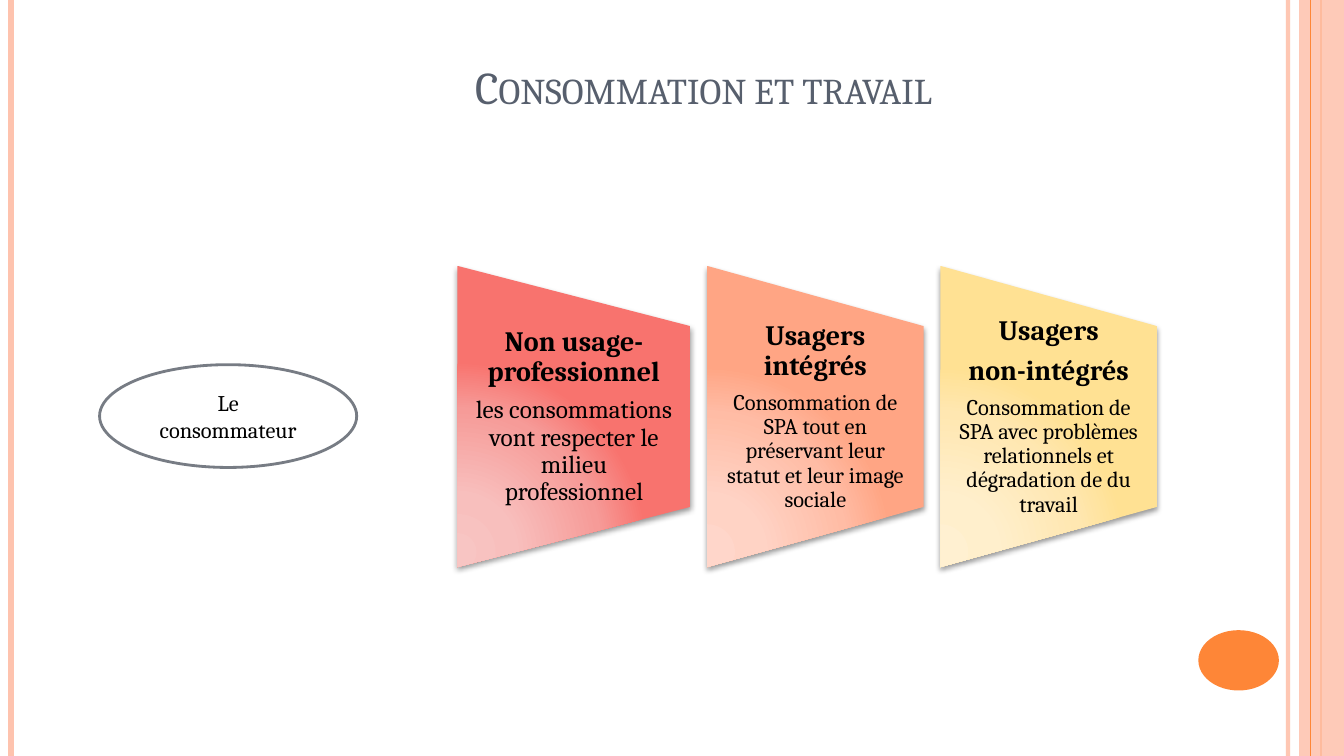
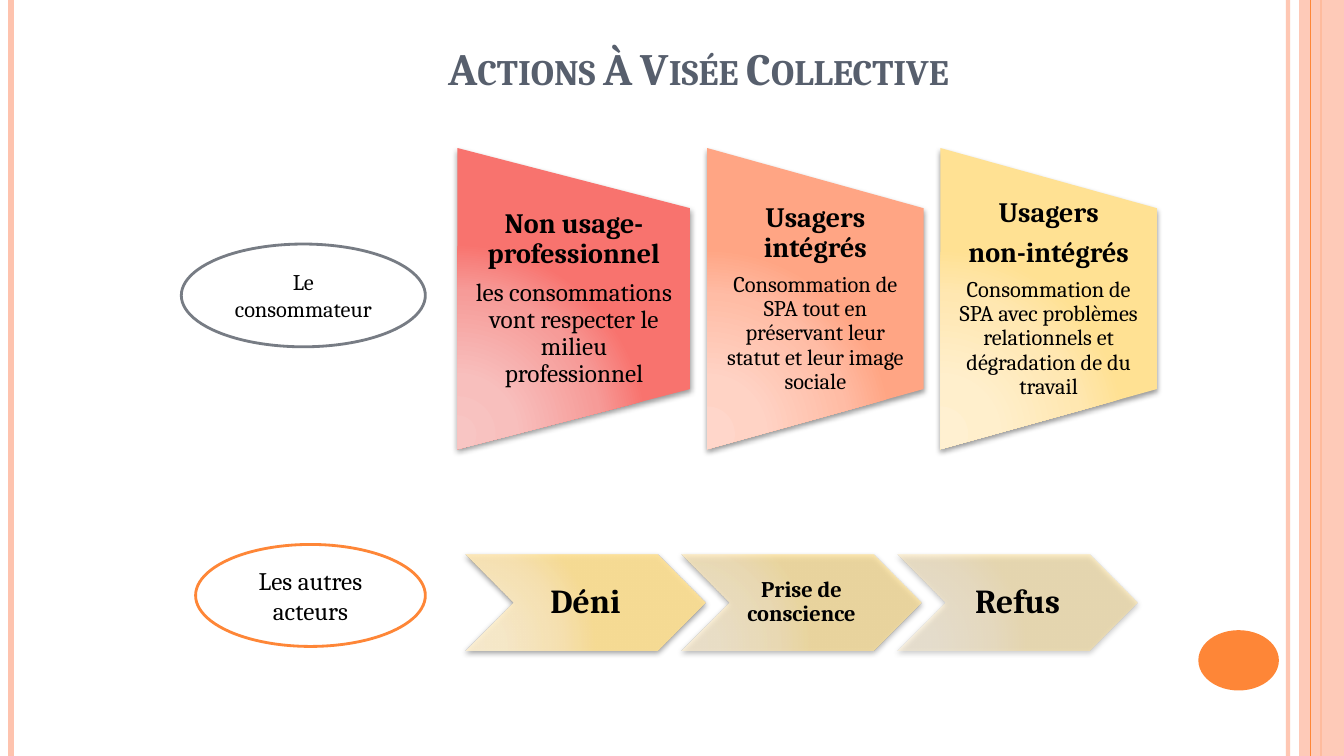
from lxml.etree import SubElement
from pptx import Presentation
from pptx.dml.color import RGBColor
from pptx.enum.shapes import MSO_CONNECTOR as LINE, MSO_SHAPE as SHAPE
from pptx.enum.text import MSO_ANCHOR as ANCHOR, PP_ALIGN as ALIGN
from pptx.oxml import parse_xml
from pptx.oxml.ns import nsdecls, qn
from pptx.util import Cm, Pt

WIDTH, HEIGHT = 33.87, 19.05
FONT = "Cambria"
BLACK, WHITE, SLATE, GREY = "000000", "FFFFFF", "575F6D", "777C84"
ORANGE, PEACH = "FE8637", "FEC3AE"

# Gradient colours at the stops, from light to full
STOPS = (0, 30, 75, 100)
RED = ("F8C5C3", "F8BFBD", "F69B98", "F8736E")
SALMON = ("FFD6CA", "FFD3C5", "FFBCA5", "FFA584")
YELLOW = ("FFF0D1", "FFEFCC", "FFE7B1", "FFE193")

# Panels: colours, width, paragraphs (text, size, bold)
PANELS = [
    (RED, 5.87, [("Non usage-professionnel", 20, True),
                 ("les consommations vont respecter le milieu professionnel", 18, False)]),
    (SALMON, 5.46, [("Usagers intégrés", 20, True),
                    ("Consommation de SPA tout en préservant leur statut et leur "
                     "image sociale", 16, False)]),
    (YELLOW, 5.46, [("Usagers", 20, True), ("non-intégrés", 20, True),
                    ("Consommation de SPA avec problèmes relationnels et "
                     "dégradation de du travail", 16, False)]),
]
# Chevrons: text, size, opacity, inset
STEPS = [("Déni", 24, 90, 0.1), ("Prise de conscience", 16, 70, 0.05), ("Refus", 24, 50, 0.1)]


def rgb(value):
    return RGBColor.from_string(value)


def set_alpha(sp, percent):
    for color in sp.element.spPr.iter(qn("a:srgbClr")):
        SubElement(color, qn("a:alpha")).set("val", str(percent * 1000))


def write(tf, text, size, bold=False, color=BLACK, spacing=1.0, after=0.0):
    """Add a centred paragraph; `after` is a share of the text size."""
    p = tf.add_paragraph() if tf.text else tf.paragraphs[0]
    p.alignment = ALIGN.CENTER
    p.line_spacing = spacing
    p.space_before, p.space_after = Pt(0), Pt(size * after)
    r = p.add_run()
    r.text = text
    r.font.name, r.font.size, r.font.bold = FONT, Pt(size), bold
    r.font.color.rgb = rgb(color)
    return r


def add_shape(slide, kind, left, top, width, height, fill=None, line=None):
    sp = slide.shapes.add_shape(kind, Cm(left), Cm(top), Cm(width), Cm(height))
    sp.shadow.inherit = False
    if fill:
        sp.fill.solid()
        sp.fill.fore_color.rgb = rgb(fill)
    else:
        sp.fill.background()
    if line:
        sp.line.color.rgb = rgb(line)
        sp.line.width = Pt(2)
    else:
        sp.line.fill.background()
    return sp


def add_glow_shape(slide, kind, box, colors, alpha=100):
    """Shape lit from its lower left corner, with a soft shadow below."""
    sp = add_shape(slide, kind, *box)
    spPr = sp.element.spPr
    stops = "".join(
        f'<a:gs pos="{pos * 1000}"><a:srgbClr val="{color}">'
        f'<a:alpha val="{alpha * 1000}"/></a:srgbClr></a:gs>'
        for pos, color in zip(STOPS, colors))
    spPr.replace(spPr.find(qn("a:noFill")), parse_xml(
        f'<a:gradFill {nsdecls("a")} rotWithShape="0"><a:gsLst>{stops}</a:gsLst>'
        '<a:path path="circle"><a:fillToRect l="5000" t="100000" r="120000" b="10000"/>'
        '</a:path></a:gradFill>'))
    spPr.find(qn("a:effectLst")).append(parse_xml(
        f'<a:outerShdw {nsdecls("a")} blurRad="50800" dist="25400" dir="5400000" '
        f'rotWithShape="0"><a:srgbClr val="{BLACK}"><a:alpha val="40000"/>'
        '</a:srgbClr></a:outerShdw>'))
    return sp


def add_label(slide, left, top, width, height, inset_x, inset_y):
    tf = slide.shapes.add_textbox(Cm(left), Cm(top), Cm(width), Cm(height)).text_frame
    tf.word_wrap = True
    tf.vertical_anchor = ANCHOR.MIDDLE
    tf.margin_left = tf.margin_right = Cm(inset_x)
    tf.margin_top = tf.margin_bottom = Cm(inset_y)
    return tf


def add_rule(slide, x, color, width):
    cx = slide.shapes.add_connector(LINE.STRAIGHT, Cm(x), Cm(0), Cm(x), Cm(HEIGHT))
    cx.line.color.rgb = rgb(color)
    cx.line.width = Pt(width)
    SubElement(cx.element.spPr, qn("a:effectLst"))
    return cx


def add_frame(prs, slide):
    """Draw the side bands and the disc, then move them to the master."""
    pale_rule = add_rule(slide, 32.46, PEACH, 3)
    set_alpha(pale_rule, 93)
    parts = [pale_rule, add_rule(slide, 0.28, PEACH, 4.5), add_rule(slide, 33.3, ORANGE, 1.5)]
    band = add_shape(slide, SHAPE.RECTANGLE, 32.74, 0, WIDTH - 32.74, HEIGHT, PEACH)
    set_alpha(band, 87)
    parts += [band, add_rule(slide, 33.02, ORANGE, 0.75),
              add_shape(slide, SHAPE.OVAL, 30.2, 15.88, 2.03, 1.52, ORANGE)]
    for number, part in enumerate(parts, 101):
        part.element.xpath(".//p:cNvPr")[0].set("id", str(number))
        prs.slide_master.shapes.element.append(part.element)


def add_title(slide, text, left, top, size, bold=False):
    title = slide.shapes.title
    title.left, title.top, title.width, title.height = Cm(left), Cm(top), Cm(22.86), Cm(2.5)
    tf = title.text_frame
    tf.word_wrap = True
    tf.vertical_anchor = ANCHOR.BOTTOM
    r = write(tf, text, size, bold, SLATE)
    r.font._element.set("cap", "small")


def add_oval(slide, box, lines, size, line):
    tf = add_shape(slide, SHAPE.OVAL, *box, fill=WHITE, line=line).text_frame
    tf.word_wrap = True
    tf.vertical_anchor = ANCHOR.MIDDLE
    for text in lines:
        write(tf, text, size)


def add_panels(slide, left, top, height=7.59, gap=0.42):
    for colors, width, paragraphs in PANELS:
        # The preset is turned a quarter, so its sides swap about the centre
        shift = (height - width) / 2
        sp = add_glow_shape(slide, SHAPE.FLOWCHART_MANUAL_OPERATION,
                            (left - shift, top + shift, height, width), colors)
        sp.rotation = 270
        tf = add_label(slide, left, top + height * 0.2, width, height * 0.6, 0.36, 0)
        for text, size, bold in paragraphs:
            write(tf, text, size, bold, spacing=0.9, after=0.35)
        left += width + gap


def add_chevrons(slide, left, top, width=6.05, height=2.42):
    for i, (text, size, alpha, inset) in enumerate(STEPS):
        x = left + i * width * 0.9
        add_glow_shape(slide, SHAPE.CHEVRON, (x, top, width, height), YELLOW, alpha)
        tf = add_label(slide, x + height / 2, top, width - height, height, inset, inset)
        write(tf, text, size, True, spacing=0.9, after=0.35)


def consumption_slide(slide):
    add_title(slide, "Consommation et travail", 6.3, 0.5, 32.4)
    add_panels(slide, 11.53, 6.7)
    add_oval(slide, (2.51, 9.19, 6.48, 2.59), ["Le consommateur"], 16, GREY)


def actions_slide(slide):
    add_title(slide, "Actions À Visée Collective", 6.17, 0.02, 32, True)
    add_panels(slide, 11.53, 3.73)
    add_oval(slide, (4.57, 6.15, 6.15, 2.59), ["Le consommateur"], 16, GREY)
    add_chevrons(slide, 11.73, 13.97)
    add_oval(slide, (4.93, 13.72, 5.79, 2.57), ["Les autres", "acteurs"], 18, ORANGE)


def main():
    prs = Presentation()
    prs.slide_width, prs.slide_height = Cm(WIDTH), Cm(HEIGHT)
    title_only = prs.slide_layouts[5]
    first, second = [prs.slides.add_slide(title_only) for _ in range(2)]
    add_frame(prs, first)
    consumption_slide(first)
    actions_slide(second)
    prs.save("out.pptx")


if __name__ == "__main__":
    main()
